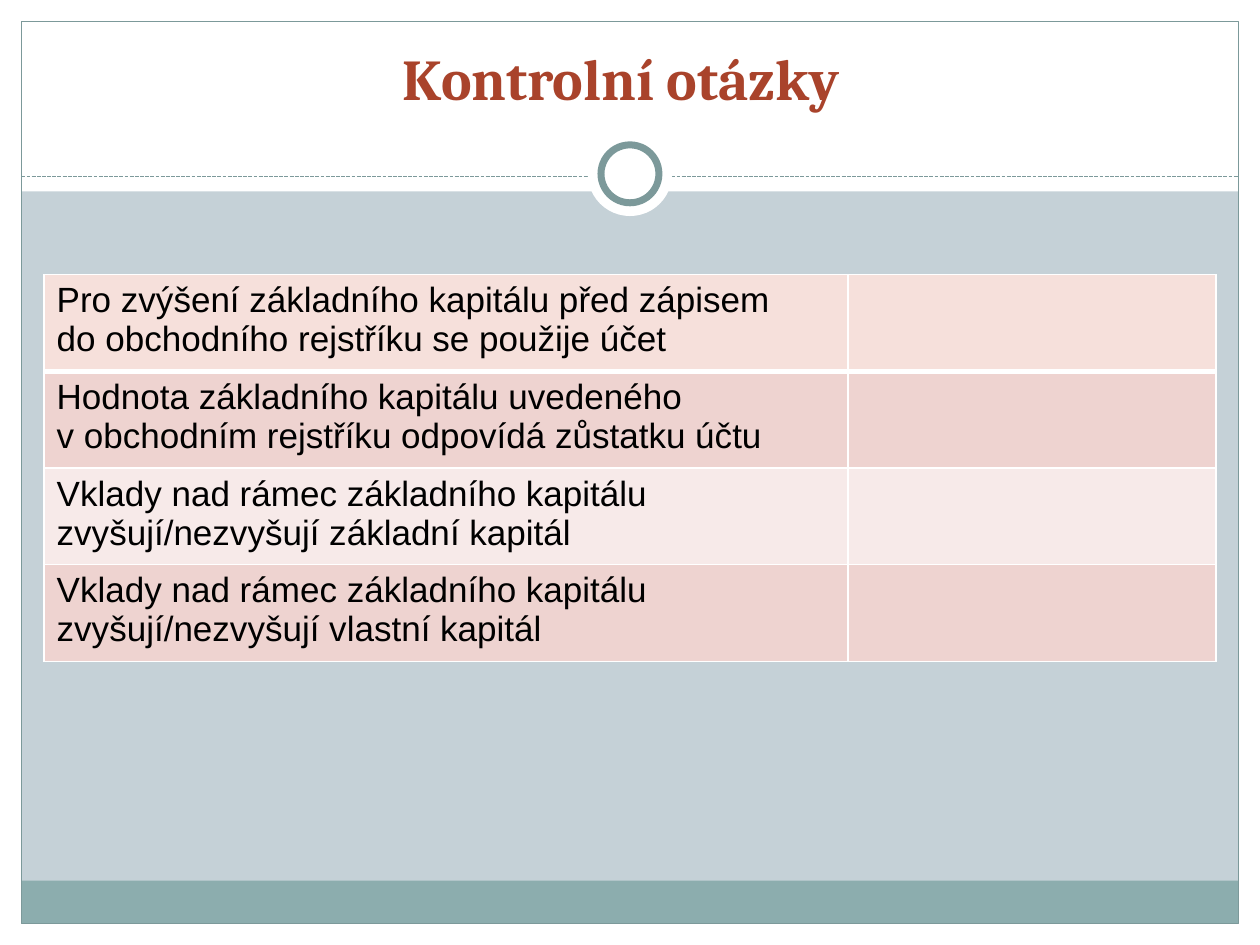
from dataclasses import dataclass
from typing import Optional

from lxml.etree import SubElement
from pptx import Presentation
from pptx.dml.color import RGBColor
from pptx.enum.dml import MSO_LINE
from pptx.enum.shapes import MSO_CONNECTOR, MSO_SHAPE as Preset
from pptx.enum.text import MSO_ANCHOR as Anchor, PP_ALIGN as Align
from pptx.oxml import parse_xml
from pptx.oxml.ns import nsdecls, qn
from pptx.util import Inches, Pt

WHITE = RGBColor(0xFF, 0xFF, 0xFF)
BLACK = RGBColor(0, 0, 0)
BACKDROP = RGBColor(0xC5, 0xD1, 0xD7)
TEAL = RGBColor(0x8C, 0xAD, 0xAE)
SLATE = RGBColor(0x7C, 0x99, 0x9A)
BRICK = RGBColor(0xA9, 0x43, 0x2B)
ROSE = RGBColor(0xEE, 0xD3, 0xD0)
PEACH = RGBColor(0xF6, 0xE0, 0xDB)
BLUSH = RGBColor(0xF7, 0xEA, 0xE9)

WIDTH, HEIGHT, MARGIN = 10, 7.5, 0.17
INNER_WIDTH = WIDTH - 2 * MARGIN
FOOT = HEIGHT - MARGIN
HEADER, FOOTER = 1.52, 0.34
RULE_Y = 1.4
DISC, RING, RING_MIDDLE = 0.67, 0.46, 1.38
COLUMNS, ROW_HEIGHT = (6.38, 2.92), 0.72


@dataclass(frozen=True)
class Panel:
    left: float
    top: float
    width: float
    height: float
    fill: Optional[RGBColor] = WHITE
    line_width: float = 0
    preset: Preset = Preset.RECTANGLE


@dataclass(frozen=True)
class Question:
    paragraphs: tuple[str, ...]
    fill: RGBColor


def centred_disc(size: float, line_width: float = 0) -> Panel:
    return Panel((WIDTH - size) / 2, RING_MIDDLE - size / 2, size, size,
                 WHITE, line_width, Preset.OVAL)


FRAME = (
    Panel(0, FOOT, WIDTH, MARGIN),
    Panel(0, 0, WIDTH, HEADER),
    Panel(0, 0, MARGIN, HEIGHT),
    Panel(WIDTH - MARGIN, 0, MARGIN, HEIGHT),
    Panel(MARGIN, FOOT - FOOTER, INNER_WIDTH, FOOTER, TEAL),
    Panel(MARGIN, MARGIN, INNER_WIDTH, HEIGHT - 2 * MARGIN, None, 0.75),
)
MEDALLION = (centred_disc(DISC), centred_disc(RING, 4))

QUESTIONS = (
    Question(("Pro zvýšení základního kapitálu před zápisem",
              "do obchodního rejstříku se použije účet"), PEACH),
    Question(("Hodnota základního kapitálu uvedeného",
              "v obchodním rejstříku odpovídá zůstatku účtu"), ROSE),
    Question(("Vklady nad rámec základního kapitálu "
              "zvyšují/nezvyšují základní kapitál",), BLUSH),
    Question(("Vklady nad rámec základního kapitálu "
              "zvyšují/nezvyšují vlastní kapitál",), ROSE),
)


def write(frame, paragraphs: tuple[str, ...], *, font: str, size: float,
          color: RGBColor, bold: bool = False, align=Align.LEFT) -> None:
    frame.word_wrap = True
    for index, words in enumerate(paragraphs):
        paragraph = frame.add_paragraph() if index else frame.paragraphs[0]
        paragraph.alignment = align
        run = paragraph.add_run()
        run.text = words
        run.font.name, run.font.size, run.font.bold = font, Pt(size), bold
        run.font.color.rgb = color


def draw_panel(slide, panel: Panel) -> None:
    box = map(Inches, (panel.left, panel.top, panel.width, panel.height))
    shape = slide.shapes.add_shape(panel.preset, *box)
    shape.shadow.inherit = False
    if panel.fill is None:
        shape.fill.background()
    else:
        shape.fill.solid()
        shape.fill.fore_color.rgb = panel.fill
    if panel.line_width:
        shape.line.color.rgb = SLATE
        shape.line.width = Pt(panel.line_width)
    else:
        shape.line.fill.background()


def draw_rule(slide) -> None:
    rule = slide.shapes.add_connector(
        MSO_CONNECTOR.STRAIGHT, Inches(MARGIN), Inches(RULE_Y),
        Inches(WIDTH - MARGIN), Inches(RULE_Y))
    rule.line.color.rgb = SLATE
    rule.line.width = Pt(0.75)
    rule.line.dash_style = MSO_LINE.SQUARE_DOT
    SubElement(rule._element.spPr, qn("a:effectLst"))


def set_borders(cell, top: float, bottom: float) -> None:
    edges = {"lnL": 1, "lnR": 1, "lnT": top, "lnB": bottom}
    properties = cell._tc.get_or_add_tcPr()
    # Borders have to come before the fill
    for index, (edge, width) in enumerate(edges.items()):
        properties.insert(index, parse_xml(
            f'<a:{edge} {nsdecls("a")} w="{Pt(width)}"><a:solidFill>'
            f'<a:srgbClr val="{WHITE}"/></a:solidFill></a:{edge}>'))


def draw_questions(slide) -> None:
    table = slide.shapes.add_table(
        len(QUESTIONS), len(COLUMNS), Inches(0.35), Inches(2.18),
        Inches(sum(COLUMNS)), Inches(ROW_HEIGHT * len(QUESTIONS))).table
    table.first_row = table.horz_banding = False
    for column, width in zip(table.columns, COLUMNS):
        column.width = Inches(width)
    for index, (row, question) in enumerate(zip(table.rows, QUESTIONS)):
        row.height = Inches(ROW_HEIGHT)
        for cell in row.cells:
            cell.fill.solid()
            cell.fill.fore_color.rgb = question.fill
            set_borders(cell, top=3 if index == 1 else 1,
                        bottom=3 if index == 0 else 1)
        write(row.cells[0].text_frame, question.paragraphs,
              font="Arial", size=20, color=BLACK)


def main() -> None:
    deck = Presentation()
    deck.slide_width, deck.slide_height = Inches(WIDTH), Inches(HEIGHT)
    slide = deck.slides.add_slide(deck.slide_layouts[6])
    slide.background.fill.solid()
    slide.background.fill.fore_color.rgb = BACKDROP

    # Frame, dashed rule and the ring on top of it
    for panel in FRAME:
        draw_panel(slide, panel)
    draw_rule(slide)
    for panel in MEDALLION:
        draw_panel(slide, panel)

    # Title
    title = slide.shapes.add_textbox(
        Inches(0.43), Inches(-0.27), Inches(9), Inches(1.21)).text_frame
    title.vertical_anchor = Anchor.BOTTOM
    write(title, ("Kontrolní otázky",), font="Cambria", size=33,
          color=BRICK, bold=True, align=Align.CENTER)

    # Questions with a blank answer column
    draw_questions(slide)
    deck.save("out.pptx")


if __name__ == "__main__":
    main()
